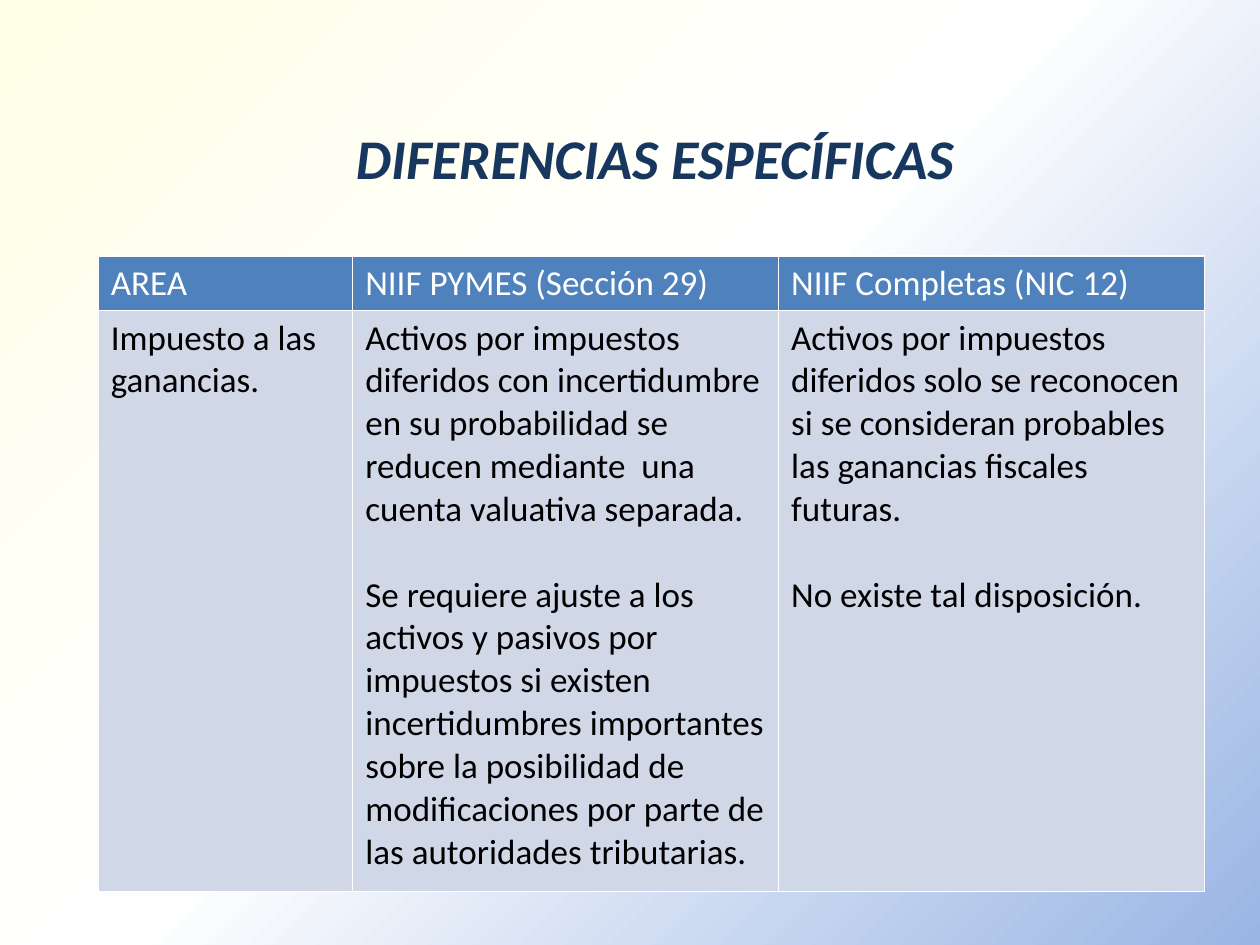
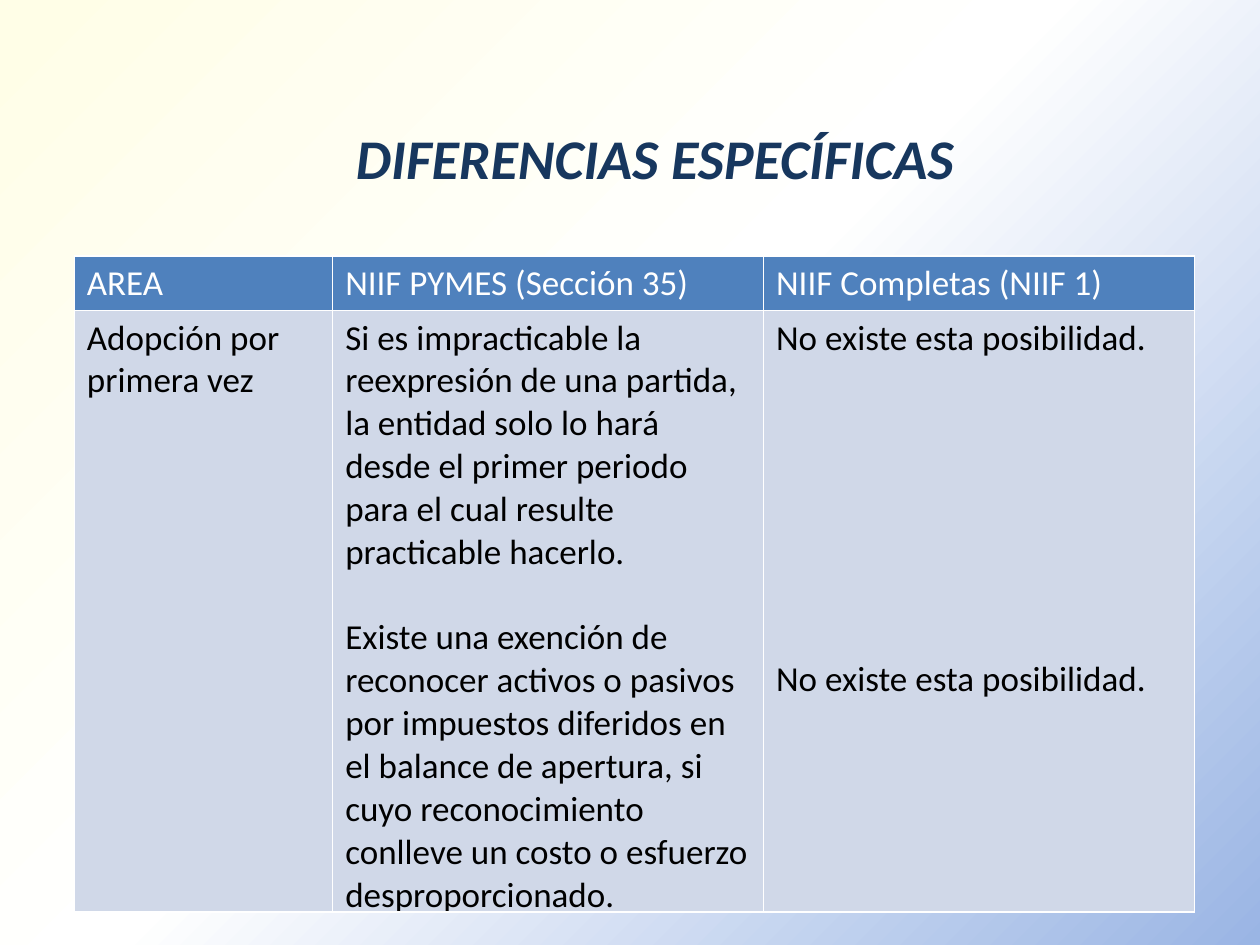
from dataclasses import dataclass

from lxml.etree import SubElement
from pptx import Presentation
from pptx.dml.color import RGBColor as RGB
from pptx.enum.text import MSO_ANCHOR as Anchor, PP_ALIGN as Align
from pptx.oxml.ns import qn
from pptx.util import Inches, Pt


@dataclass(frozen=True)
class Theme:
    font: str = "Calibri"
    title: str = "17375E"
    head: str = "4F81BD"
    body: str = "D0D8E8"
    light: str = "FFFFFF"
    dark: str = "000000"
    backdrop: tuple = ((1, "FFFEE7"), (48, "FFFFFF"), (100, "9AB5E4"))
    title_size: int = 32
    text_size: int = 20
    line_ratio: float = 1.22
    border: int = 1


def write(tf, text, theme, size=None, color=None, bold=False, italic=False,
          align=Align.LEFT):
    size = size or theme.text_size
    gap = 0
    first = True
    for line in text.split("\n"):
        if not line:
            gap += 1
            continue
        p = tf.paragraphs[0] if first else tf.add_paragraph()
        first = False
        p.alignment = align
        p.space_before = Pt(gap * size * theme.line_ratio)
        gap = 0
        r = p.add_run()
        r.text = line
        r.font.name = theme.font
        r.font.size = Pt(size)
        r.font.bold = bold
        r.font.italic = italic
        r.font.color.rgb = RGB.from_string(color or theme.dark)


class Deck:
    COLS, ROWS = 100, 75

    def __init__(self, theme):
        self.theme = theme
        self.prs = Presentation()
        self.prs.slide_width = Inches(10)
        self.prs.slide_height = Inches(7.5)
        self.s = None
        self.backdrop()

    def x(self, cols):
        return round(self.prs.slide_width * cols / self.COLS)

    def y(self, rows):
        return round(self.prs.slide_height * rows / self.ROWS)

    def backdrop(self):
        master = self.prs.slide_master
        fill = master.background.fill
        fill.gradient()
        fill.gradient_angle = 315
        stops = next(master.element.iter(qn("a:gsLst")))
        for stop in list(stops):
            stops.remove(stop)
        for share, color in self.theme.backdrop:
            gs = SubElement(stops, qn("a:gs"), pos=str(share * 1000))
            SubElement(gs, qn("a:srgbClr"), val=color)

    def slide(self):
        self.s = self.prs.slides.add_slide(self.prs.slide_layouts[6])

    def title(self, text):
        sp = self.s.shapes.add_textbox(self.x(15.4), self.y(7.8),
                                       self.x(73.2), self.y(9.4))
        tf = sp.text_frame
        tf.word_wrap = True
        tf.vertical_anchor = Anchor.MIDDLE
        write(tf, text, self.theme, size=self.theme.title_size,
              color=self.theme.title, bold=True, italic=True,
              align=Align.CENTER)

    def borders(self, cell):
        props = cell._tc.get_or_add_tcPr()
        for i, side in enumerate(("lnL", "lnR", "lnT", "lnB")):
            ln = props.makeelement(qn(f"a:{side}"),
                                   {"w": str(Pt(self.theme.border))})
            fill = SubElement(ln, qn("a:solidFill"))
            SubElement(fill, qn("a:srgbClr"), val=self.theme.light)
            props.insert(i, ln)

    def table(self, rows, left, widths, top=20.3, heights=(4.2, 46.1)):
        sp = self.s.shapes.add_table(len(rows), len(widths), self.x(left),
                                     self.y(top), self.x(sum(widths)),
                                     self.y(sum(heights)))
        tbl = sp.table
        tbl.horz_banding = False
        for col, width in zip(tbl.columns, widths):
            col.width = self.x(width)
        for i, (row, height) in enumerate(zip(rows, heights)):
            tbl.rows[i].height = self.y(height)
            back, ink = ((self.theme.body, self.theme.dark) if i
                         else (self.theme.head, self.theme.light))
            for j, text in enumerate(row):
                cell = tbl.cell(i, j)
                cell.fill.solid()
                cell.fill.fore_color.rgb = RGB.from_string(back)
                write(cell.text_frame, text, self.theme, color=ink)
                self.borders(cell)


INCOME_TAX = (
    ("AREA", "NIIF PYMES (Sección 29)", "NIIF Completas (NIC 12)"),
    ("Impuesto a las ganancias.",
     "Activos por impuestos diferidos con incertidumbre en su probabilidad "
     "se reducen mediante  una cuenta valuativa separada.\n\n"
     "Se requiere ajuste a los activos y pasivos por impuestos si existen "
     "incertidumbres importantes sobre la posibilidad de modificaciones por "
     "parte de las autoridades tributarias.",
     "Activos por impuestos diferidos solo se reconocen si se consideran "
     "probables las ganancias fiscales futuras.\n\n"
     "No existe tal disposición."),
)
NO_OPTION = "No existe esta posibilidad."
FIRST_ADOPTION = (
    ("AREA", "NIIF PYMES (Sección 35)", "NIIF Completas (NIIF 1)"),
    ("Adopción por primera vez",
     "Si es impracticable la reexpresión de una partida, la entidad solo lo "
     "hará desde el primer periodo para el cual resulte practicable "
     "hacerlo.\n\n"
     "Existe una exención de reconocer activos o pasivos por impuestos "
     "diferidos en el balance de apertura, si cuyo reconocimiento conlleve "
     "un costo o esfuerzo desproporcionado.",
     NO_OPTION + "\n" * 8 + NO_OPTION),
)


def main():
    deck = Deck(Theme())
    for rows, left, widths in (
        (INCOME_TAX, 7.8, (20.2, 33.8, 33.8)),
        (FIRST_ADOPTION, 5.9, (20.5, 34.2, 34.2)),
    ):
        deck.slide()
        deck.title("DIFERENCIAS ESPECÍFICAS")
        deck.table(rows, left, widths)
    deck.prs.save("out.pptx")


if __name__ == "__main__":
    main()
